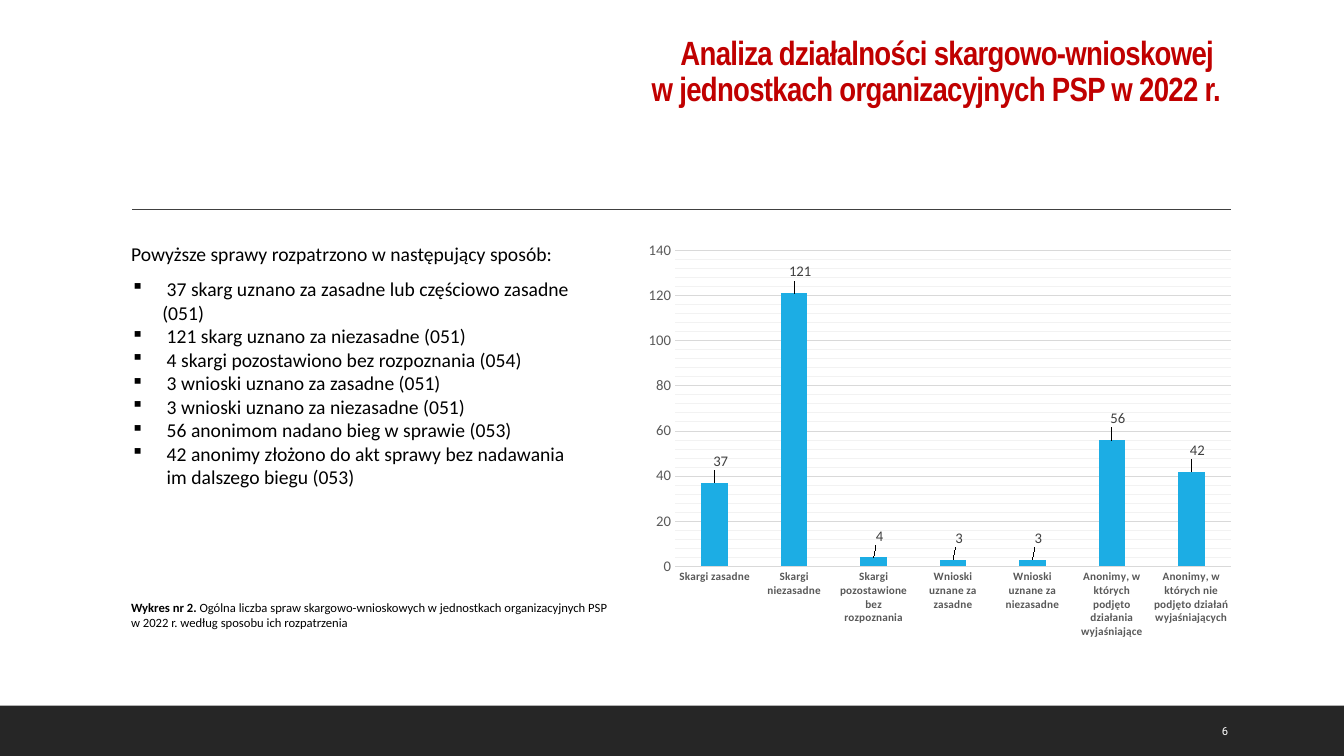
from dataclasses import dataclass

from lxml import etree
from pptx import Presentation
from pptx.chart.data import CategoryChartData
from pptx.dml.color import RGBColor
from pptx.enum.chart import XL_CHART_TYPE, XL_LABEL_POSITION, XL_TICK_MARK
from pptx.enum.shapes import MSO_CONNECTOR, MSO_SHAPE
from pptx.enum.text import MSO_ANCHOR, PP_ALIGN
from pptx.oxml import parse_xml
from pptx.oxml.ns import nsdecls, qn
from pptx.util import Inches, Pt

RED = RGBColor(0xC0, 0x00, 0x00)
BLACK = RGBColor(0x00, 0x00, 0x00)
WHITE = RGBColor(0xFF, 0xFF, 0xFF)
FOOTER = RGBColor(0x26, 0x26, 0x26)
DARK = RGBColor(0x40, 0x40, 0x40)
GREY = RGBColor(0x59, 0x59, 0x59)
GRID = RGBColor(0xD9, 0xD9, 0xD9)
MINOR_GRID = RGBColor(0xF2, 0xF2, 0xF2)
BLUE = RGBColor(0x1C, 0xAD, 0xE4)

LEFT, RIGHT = PP_ALIGN.LEFT, PP_ALIGN.RIGHT
TOP, MIDDLE = MSO_ANCHOR.TOP, MSO_ANCHOR.MIDDLE
NO_TICK = XL_TICK_MARK.NONE
OUTSIDE_END = XL_LABEL_POSITION.OUTSIDE_END
COLUMNS = XL_CHART_TYPE.COLUMN_CLUSTERED
RECTANGLE = MSO_SHAPE.RECTANGLE
STRAIGHT = MSO_CONNECTOR.STRAIGHT


@dataclass
class Run:
    text: str
    size: float = 14
    font: str = "Calibri"
    color: RGBColor = BLACK
    bold: bool = False
    spacing: float = 0


@dataclass
class Para:
    runs: list[Run]
    align: PP_ALIGN = LEFT
    line_spacing: float = 1.0
    before: float = 0
    after: float = 0
    margin: float = 0
    hanging: float = 0
    bullet: str = ""


@dataclass
class Outcome:
    category: str
    count: int
    sentence: str


OUTCOMES = [
    Outcome("Skargi zasadne", 37, " 37 skarg uznano za zasadne lub częściowo zasadne (051)"),
    Outcome("Skargi niezasadne", 121, " 121 skarg uznano za niezasadne (051)"),
    Outcome("Skargi pozostawione bez rozpoznania", 4, " 4 skargi pozostawiono bez rozpoznania (054)"),
    Outcome("Wnioski uznane za zasadne", 3, " 3 wnioski uznano za zasadne (051)"),
    Outcome("Wnioski uznane za niezasadne", 3, " 3 wnioski uznano za niezasadne (051)"),
    Outcome("Anonimy, w których podjęto działania wyjaśniające", 56,
            " 56 anonimom nadano bieg w sprawie (053)"),
    Outcome("Anonimy, w których nie podjęto działań wyjaśniających", 42,
            " 42 anonimy złożono do akt sprawy bez nadawania \n im dalszego biegu (053)"),
]


def set_font(font, size: float, color: RGBColor, bold: bool = False, name: str = "Calibri") -> None:
    font.size, font.bold, font.name = Pt(size), bold, name
    font.color.rgb = color


def add_run(p, run: Run) -> None:
    for i, line in enumerate(run.text.split("\n")):
        if i:
            p.add_line_break()
        r = p.add_run()
        r.text = line
        set_font(r.font, run.size, run.color, run.bold, run.font)
        if run.spacing:
            r._r.get_or_add_rPr().set("spc", str(int(run.spacing * 100)))


def add_text(s, x: float, y: float, w: float, h: float, paras: list[Para],
             inset: float = 0.1, anchor: MSO_ANCHOR = TOP) -> None:
    tf = s.shapes.add_textbox(Inches(x), Inches(y), Inches(w), Inches(h)).text_frame
    tf.word_wrap = True
    tf.vertical_anchor = anchor
    tf.margin_left = tf.margin_right = Inches(inset)
    for i, para in enumerate(paras):
        p = tf.add_paragraph() if i else tf.paragraphs[0]
        p.alignment, p.line_spacing = para.align, para.line_spacing
        p.space_before, p.space_after = Pt(para.before), Pt(para.after)
        pPr = p._p.get_or_add_pPr()
        pPr.set("marL", str(Inches(para.margin)))
        pPr.set("indent", str(-Inches(para.hanging)))
        if para.bullet:
            etree.SubElement(pPr, qn("a:buSzPct")).set("val", "90000")
            etree.SubElement(pPr, qn("a:buChar")).set("char", para.bullet)
        for run in para.runs:
            add_run(p, run)


def manual_layout(inner: bool = False, **fractions: float):
    """Return a c:layout element with the given x, y, w, h fractions."""
    parts = '<c:layoutTarget val="inner"/><c:xMode val="edge"/><c:yMode val="edge"/>' if inner else ""
    parts += "".join(f'<c:{key} val="{value}"/>' for key, value in fractions.items())
    return parse_xml(f'<c:layout {nsdecls("c")}><c:manualLayout>{parts}</c:manualLayout></c:layout>')


def color_minor_gridlines(axis, color: RGBColor) -> None:
    axis.has_minor_gridlines = True
    axis._element.find(qn("c:minorGridlines")).append(parse_xml(
        f'<c:spPr {nsdecls("c", "a")}><a:ln w="{Pt(0.75)}"><a:solidFill>'
        f'<a:srgbClr val="{color}"/></a:solidFill></a:ln></c:spPr>'))


def add_outcome_chart(s) -> None:
    data = CategoryChartData()
    data.categories = [o.category for o in OUTCOMES]
    data.add_series("Series 1", [o.count for o in OUTCOMES])
    chart = s.shapes.add_chart(COLUMNS, Inches(6.31), Inches(2.32),
                               Inches(6.02), Inches(4.1), data).chart
    chart.has_legend = chart.has_title = False
    set_font(chart.font, 10, BLACK, name="Roboto")

    plot_area = chart._chartSpace.find(qn("c:chart")).find(qn("c:plotArea"))
    for old in plot_area.findall(qn("c:layout")):
        plot_area.remove(old)
    plot_area.insert(0, manual_layout(True, x=0.064, y=0.04, w=0.916, h=0.765))

    cat, val = chart.category_axis, chart.value_axis
    for axis in (cat, val):
        axis.major_tick_mark = axis.minor_tick_mark = NO_TICK
    set_font(cat.tick_labels.font, 8, GREY, bold=True)
    set_font(val.tick_labels.font, 10.5, GREY)
    val.minimum_scale, val.maximum_scale = 0, 140
    val.major_unit, val.minor_unit = 20, 4
    val.has_major_gridlines = True
    color_minor_gridlines(val, MINOR_GRID)
    val.format.line.fill.background()
    for line in (cat.format.line, val.major_gridlines.format.line):
        line.color.rgb, line.width = GRID, Pt(0.75)

    plot = chart.plots[0]
    plot.gap_width, plot.vary_by_categories = 199, False
    series = plot.series[0]
    series.format.fill.solid()
    series.format.fill.fore_color.rgb = BLUE
    labels = series.data_labels
    labels.show_value, labels.position = True, OUTSIDE_END
    set_font(labels.font, 10.5, DARK)
    for i in range(len(OUTCOMES)):
        label = series.points[i].data_label
        label.position = OUTSIDE_END
        set_font(label.font, 10.5, DARK)
    for dLbl in labels._element.findall(qn("c:dLbl")):
        dLbl.insert(1, manual_layout(x=0.01, y=-0.02))


def main() -> None:
    prs = Presentation()
    prs.slide_width, prs.slide_height = Inches(13.33), Inches(7.5)
    s = prs.slides.add_slide(prs.slide_layouts[6])

    footer = s.shapes.add_shape(RECTANGLE, 0, Inches(7), prs.slide_width, Inches(0.5))
    footer.shadow.inherit = False
    footer.fill.solid()
    footer.fill.fore_color.rgb = FOOTER
    footer.line.fill.background()

    rule = s.shapes.add_connector(STRAIGHT, Inches(1.31), Inches(2.08), Inches(12.21), Inches(2.08))
    rule.line.color.rgb, rule.line.width = DARK, Pt(1)
    etree.SubElement(rule._element.spPr, qn("a:effectLst"))

    title = Run("Analiza działalności skargowo-wnioskowej \nw jednostkach organizacyjnych PSP w 2022 r.",
                24, "Arial Narrow", RED, True, -0.5)
    add_text(s, 1.2, 0.31, 11, 1.59, [Para([title], RIGHT, 0.9)])

    intro = Para([Run("Powyższe sprawy rozpatrzono w następujący sposób:")],
                 line_spacing=1.15, after=8, margin=0.1)
    bullets = [Para([Run(o.sentence)], margin=0.41, hanging=0.31, bullet="▪") for o in OUTCOMES]
    caption = Para([Run("Wykres nr 2. ", 9, bold=True),
                    Run("Ogólna liczba spraw skargowo-wnioskowych w jednostkach organizacyjnych PSP "
                        "w 2022 r. według sposobu ich rozpatrzenia", 9)], before=79, margin=0.1)
    add_text(s, 1.2, 2.32, 4.9, 4.1, [intro, *bullets, caption], inset=0)

    add_text(s, 12.02, 7.05, 0.85, 0.4, [Para([Run("6", 8, "Roboto", WHITE)])], anchor=MIDDLE)
    add_outcome_chart(s)
    prs.save("out.pptx")


if __name__ == "__main__":
    main()
